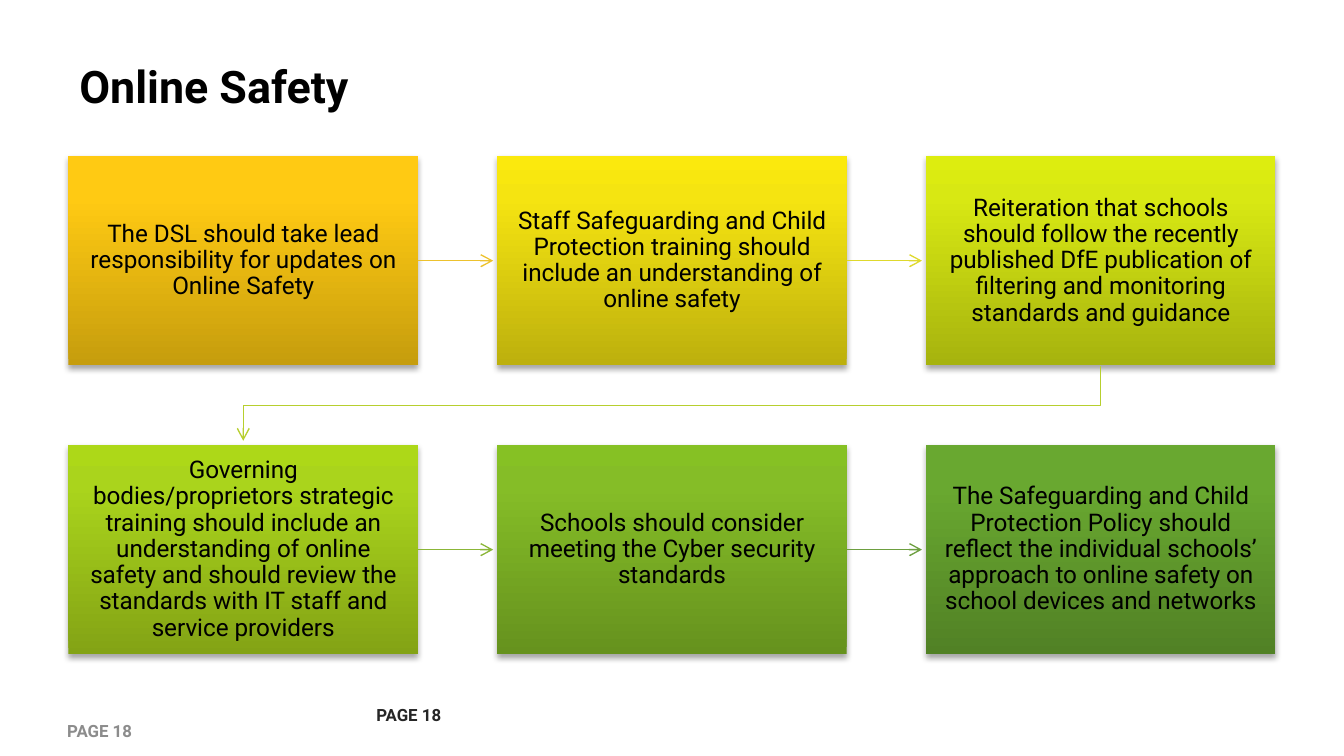
from copy import deepcopy

from lxml import etree
from pptx import Presentation
from pptx.dml.color import RGBColor
from pptx.enum.shapes import MSO_CONNECTOR, MSO_SHAPE
from pptx.enum.text import MSO_ANCHOR, PP_ALIGN
from pptx.oxml.ns import qn
from pptx.util import Inches, Pt

RECT, STRAIGHT = MSO_SHAPE.RECTANGLE, MSO_CONNECTOR.STRAIGHT
LEFT, CENTER, MIDDLE = PP_ALIGN.LEFT, PP_ALIGN.CENTER, MSO_ANCHOR.MIDDLE
X0, Y0, BOX_W, BOX_H = 0.51, 1.16, 2.6, 1.56
STEP_X, STEP_Y, COLS = 3.19, 2.15, 3

STEPS = [
    ("The DSL should take lead responsibility for updates on Online Safety",
     ("C69D0D", "FFCA13", "FFCA14"), "EDC22E"),
    ("Staff Safeguarding and Child Protection training should include an "
     "understanding of online safety",
     ("BDB00D", "F5E411", "FBE90D"), "DFD92D"),
    ("Reiteration that schools should follow the recently published DfE "
     "publication of filtering and monitoring standards and guidance",
     ("A6B30E", "D8E813", "DDED0F"), "B7CF2E"),
    ("Governing bodies/proprietors strategic training should include an "
     "understanding of online safety and should review the standards with "
     "IT staff and service providers",
     ("83A315", "AAD41C", "ADD818"), "8BB638"),
    ("Schools should consider meeting the Cyber security standards",
     ("66921E", "85BD27", "86C124"), "6D9F40"),
    ("The Safeguarding and Child Protection Policy should reflect the "
     "individual schools’ approach to online safety on school devices and networks",
     ("518125", "69A830", "69AB2E"), None),
]


def rgb(value):
    """Return the colour for a hex string."""
    return RGBColor.from_string(value)


def write(s, text, size=13, color="000000", bold=False, align=LEFT,
          spacing=1.0, inset=(0.09, 0.04)):
    """Put one formatted paragraph into a shape."""
    tf = s.text_frame
    tf.word_wrap = True
    tf.vertical_anchor = MIDDLE
    tf.margin_left = tf.margin_right = Inches(inset[0])
    tf.margin_top = tf.margin_bottom = Inches(inset[1])
    p = tf.paragraphs[0]
    p.alignment = align
    p.line_spacing = spacing
    r = p.add_run()
    r.text = text
    r.font.name = "Roboto"
    r.font.size = Pt(size)
    r.font.bold = bold
    r.font.color.rgb = rgb(color)


def add_label(slide, x, y, w, h, text, **fmt):
    """Add a text box."""
    write(slide.shapes.add_textbox(Inches(x), Inches(y), Inches(w), Inches(h)), text, **fmt)


def fill_gradient(s, colors):
    """Fill a shape with a three-stop gradient running upwards."""
    s.fill.gradient()
    s.fill.gradient_angle = 90
    stops = s._element.spPr.find(qn("a:gradFill")).find(qn("a:gsLst"))
    stops.append(deepcopy(stops[0]))
    for stop, position, color in zip(s.fill.gradient_stops, (0, 0.8, 1), colors):
        stop.position = position
        stop.color.rgb = rgb(color)


def add_shadow(s):
    """Give a shape a soft shadow below it."""
    s.shadow.inherit = False
    effects = s._element.spPr.find(qn("a:effectLst"))
    shadow = etree.SubElement(effects, qn("a:outerShdw"), blurRad=str(Pt(3.1)),
                              dist=str(Pt(1.8)), dir="5400000", rotWithShape="0")
    color = etree.SubElement(shadow, qn("a:srgbClr"), val="000000")
    etree.SubElement(color, qn("a:alpha"), val="35000")


def add_step(slide, x, y, text, colors):
    """Add one gradient box with its text."""
    s = slide.shapes.add_shape(RECT, Inches(x), Inches(y), Inches(BOX_W), Inches(BOX_H))
    fill_gradient(s, colors)
    s.line.fill.background()
    add_shadow(s)
    write(s, text, align=CENTER, spacing=0.9, inset=(0.13, 0.13))


def style_arrow(s, color):
    """Set the colour, width and open head of an arrow."""
    s.line.color.rgb = rgb(color)
    s.line.width = Pt(0.75)
    etree.SubElement(s.line._get_or_add_ln(), qn("a:tailEnd"), type="arrow")


def add_arrow(slide, x, y, color):
    """Add a straight arrow to the next box in the row."""
    s = slide.shapes.add_connector(STRAIGHT, Inches(x), Inches(y), Inches(x + 0.56), Inches(y))
    etree.SubElement(s._element.spPr, qn("a:effectLst"))
    style_arrow(s, color)


def add_return_arrow(slide, color):
    """Add the bent arrow from the end of the first row to the second."""
    start = X0 + BOX_W / 2
    end = start + (COLS - 1) * STEP_X
    top = Y0 + BOX_H
    builder = slide.shapes.build_freeform(Inches(end), Inches(top))
    bends = [(end, top + 0.3), (start, top + 0.3), (start, top + 0.56)]
    builder.add_line_segments([(Inches(x), Inches(y)) for x, y in bends], close=False)
    s = builder.convert_to_shape()
    s.fill.background()
    s.shadow.inherit = False
    style_arrow(s, color)


def main():
    """Build the slide and save it."""
    prs = Presentation()
    prs.slide_width = Inches(10)
    prs.slide_height = prs.slide_width * 9 // 16
    slide = prs.slides.add_slide(prs.slide_layouts[6])
    add_label(slide, 2.71, 5.17, 0.87, 0.3, "PAGE 18", size=9, color="262626", bold=True)
    add_label(slide, 0.5, 0.23, 9, 0.82, "Online Safety", size=24, bold=True)
    for i, (text, colors, arrow) in enumerate(STEPS):
        row, col = divmod(i, COLS)
        x, y = X0 + col * STEP_X, Y0 + row * STEP_Y
        add_step(slide, x, y, text, colors)
        if col < COLS - 1:
            add_arrow(slide, x + BOX_W, y + BOX_H / 2, arrow)
        elif arrow:
            add_return_arrow(slide, arrow)
    add_label(slide, 0.41, 5.29, 2.33, 0.3, "PAGE 18", size=9, color="8C8C8C", bold=True)
    prs.save("out.pptx")


if __name__ == "__main__":
    main()
